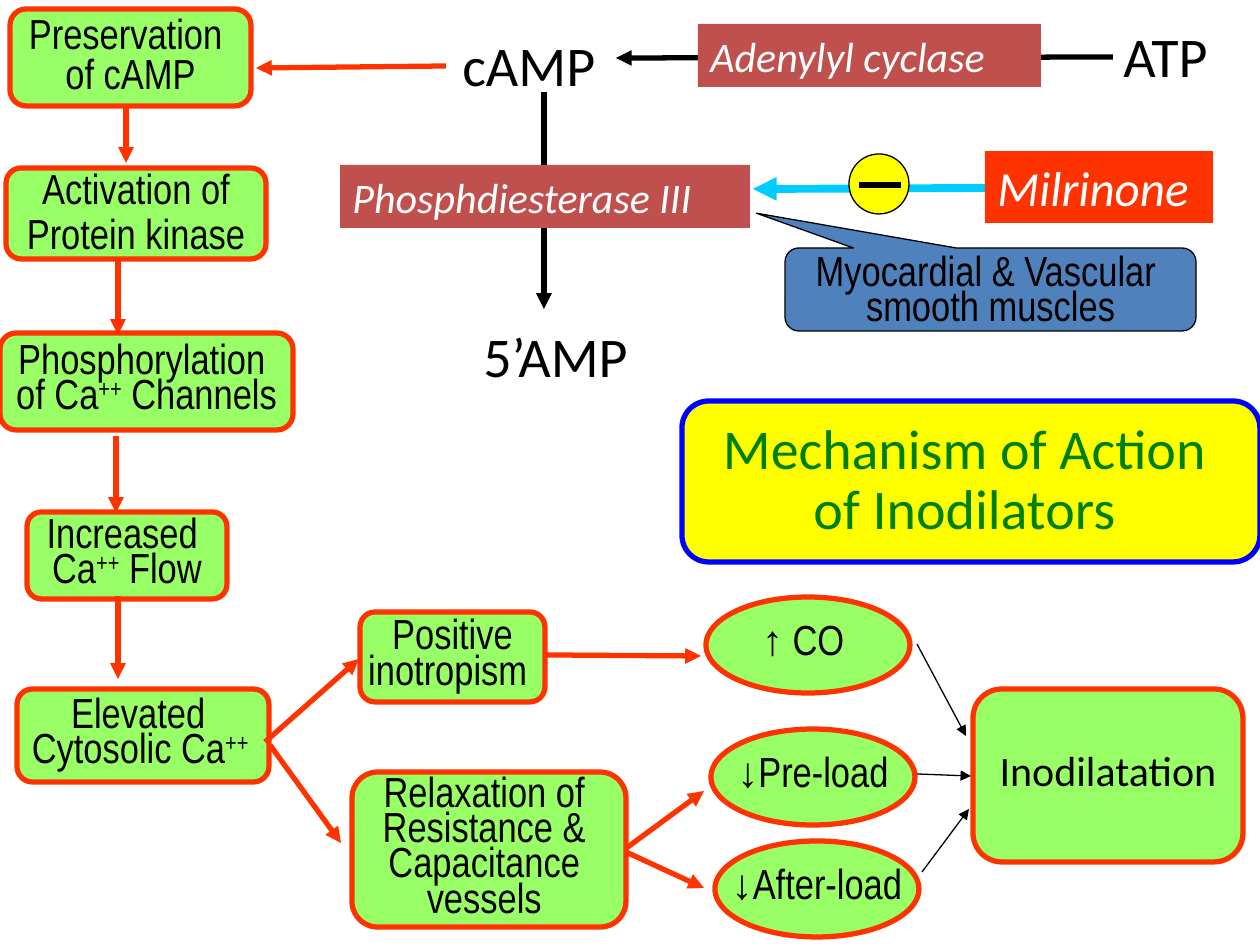
"""Build a one-slide diagram of the mechanism of action of inodilators."""
from lxml.etree import SubElement
from pptx import Presentation
from pptx.dml.color import RGBColor
from pptx.enum.shapes import MSO_CONNECTOR, MSO_SHAPE
from pptx.enum.text import MSO_ANCHOR, PP_ALIGN
from pptx.oxml.ns import qn
from pptx.util import Emu, Pt

BLACK = RGBColor(0x00, 0x00, 0x00)
WHITE = RGBColor(0xFF, 0xFF, 0xFF)
RED = RGBColor(0xFF, 0x33, 0x00)
BRICK = RGBColor(0xC0, 0x50, 0x4D)
LIME = RGBColor(0x99, 0xFF, 0x66)
YELLOW = RGBColor(0xFF, 0xFF, 0x00)
STEEL = RGBColor(0x4F, 0x81, 0xBD)
CYAN = RGBColor(0x00, 0xCC, 0xFF)
BLUE = RGBColor(0x00, 0x00, 0xFF)
GREEN = RGBColor(0x00, 0x80, 0x00)
SCALE = 914400 / 126
NARROW, PLAIN = "Arial Narrow", "Calibri"
RECT, ROUND, OVAL = MSO_SHAPE.RECTANGLE, MSO_SHAPE.ROUNDED_RECTANGLE, MSO_SHAPE.OVAL
CALL = MSO_SHAPE.ROUNDED_RECTANGULAR_CALLOUT

deck = Presentation()
deck.slide_width, deck.slide_height = Emu(round(1260 * SCALE)), Emu(round(945 * SCALE))
slide = deck.slides.add_slide(deck.slide_layouts[6])


def draw_line(ends, color, width, head=True):
    line = slide.shapes.add_connector(
        MSO_CONNECTOR.STRAIGHT, *[Emu(round(n * SCALE)) for n in ends])
    line.line.color.rgb = color
    line.line.width = Pt(width)
    props = line._element.spPr
    if head:
        SubElement(props.find(qn("a:ln")), qn("a:tailEnd"), type="triangle")
    SubElement(props, qn("a:effectLst"))


def draw_box(kind, place, fill, edge, width, rows=(), size=24, font=NARROW,
             color=BLACK, gap=None, italic=None, middle=True, wrap=False):
    spot = [Emu(round(n * SCALE)) for n in place]
    if kind is None:
        box = slide.shapes.add_textbox(*spot)
    else:
        box = slide.shapes.add_shape(kind, *spot)
        box.shadow.inherit = False
        box.fill.solid()
        box.fill.fore_color.rgb = fill
        if edge is None:
            box.line.fill.background()
        else:
            box.line.color.rgb = edge
            box.line.width = Pt(width)
    if kind == CALL:
        box.adjustments[0], box.adjustments[1] = -0.57, -0.92
    frame = box.text_frame
    frame.word_wrap = wrap
    frame.vertical_anchor = MSO_ANCHOR.MIDDLE if middle else MSO_ANCHOR.TOP
    for i, row in enumerate(rows):
        para = frame.add_paragraph() if i else frame.paragraphs[0]
        para.alignment = PP_ALIGN.CENTER if gap else PP_ALIGN.LEFT
        para.line_spacing = gap
        for j, part in enumerate(row.split("^")):
            run = para.add_run()
            run.text = part
            run.font.size, run.font.name = Pt(size), font
            run.font.color.rgb, run.font.italic = color, italic
            if j % 2:
                run.font._element.set("baseline", "30000")


draw_line((1113, 57, 616, 58), BLACK, 3)
draw_line((544, 92, 544, 309), BLACK, 3)
draw_line((985, 188, 753, 189), CYAN, 4.5)

for word, place in (
    ("ATP", (1111, 15, 149, 79)),
    ("cAMP", (450, 24, 176, 79)),
    ("5’AMP", (471, 315, 192, 79)),
):
    draw_box(None, place, None, None, 0, [word], 32, PLAIN, middle=False, wrap=True)

for word, place, fill, size in (
    ("Adenylyl cyclase", (698, 24, 343, 63), BRICK, 24),
    ("Phosphdiesterase III", (340, 165, 410, 63), BRICK, 24),
    ("Milrinone", (985, 151, 228, 72), RED, 28),
):
    draw_box(RECT, place, fill, None, 0, [word], size, PLAIN, WHITE,
             italic=True, middle=False, wrap=True)

draw_box(OVAL, (849, 154, 60, 60), YELLOW, BLACK, 0.75)
draw_line((859, 185, 901, 185), BLACK, 3, head=False)
draw_box(CALL, (785, 248, 411, 83), STEEL, BLACK, 0.75,
         ["Myocardial & Vascular ", "smooth muscles"], gap=0.7, middle=False, wrap=True)

for kind, place, gap, font, rows in (
    (ROUND, (10, 9, 241, 97), 0.8, NARROW, ["Preservation ", "of cAMP"]),
    (ROUND, (6, 168, 260, 91), 0.9, NARROW, ["Activation of", "Protein kinase"]),
    (ROUND, (0, 333, 293, 97), 0.7, NARROW, ["Phosphorylation ", "of Ca^++^ Channels"]),
    (ROUND, (27, 512, 200, 87), 0.7, NARROW, ["Increased ", "Ca^++^ Flow"]),
    (ROUND, (17, 689, 252, 93), 0.7, NARROW, ["Elevated ", "Cytosolic Ca^++ "]),
    (ROUND, (360, 612, 185, 90), 0.7, NARROW, ["Positive", "inotropism "]),
    (ROUND, (352, 772, 274, 155), 0.7, NARROW,
     ["Relaxation of ", "Resistance & ", "Capacitance ", "vessels "]),
    (OVAL, (706, 597, 204, 96), 0.7, NARROW, ["↑ CO "]),
    (OVAL, (711, 729, 204, 96), 0.7, NARROW, ["↓Pre-load"]),
    (OVAL, (715, 841, 204, 96), 0.7, NARROW, ["↓After-load"]),
    (ROUND, (973, 689, 270, 173), 0.7, PLAIN, ["Inodilatation"]),
):
    draw_box(kind, place, LIME, RED, 3, rows, font=font, gap=gap)

draw_box(ROUND, (682, 401, 578, 161), YELLOW, BLUE, 3,
         ["Mechanism of Action ", "of Inodilators "], 32, PLAIN, GREEN, 0.9)

for ends in (
    (446, 66, 256, 68),
    (126, 105, 126, 163),
    (118, 257, 118, 335),
    (116, 436, 116, 513),
    (118, 596, 118, 679),
    (265, 742, 359, 659),
    (270, 745, 341, 843),
    (547, 655, 701, 656),
    (625, 849, 704, 791),
    (626, 852, 704, 888),
):
    draw_line(ends, RED, 3)

for ends in (
    (917, 644, 966, 736),
    (917, 774, 971, 776),
    (922, 872, 969, 809),
):
    draw_line(ends, BLACK, 0.75)

deck.save("out.pptx")
